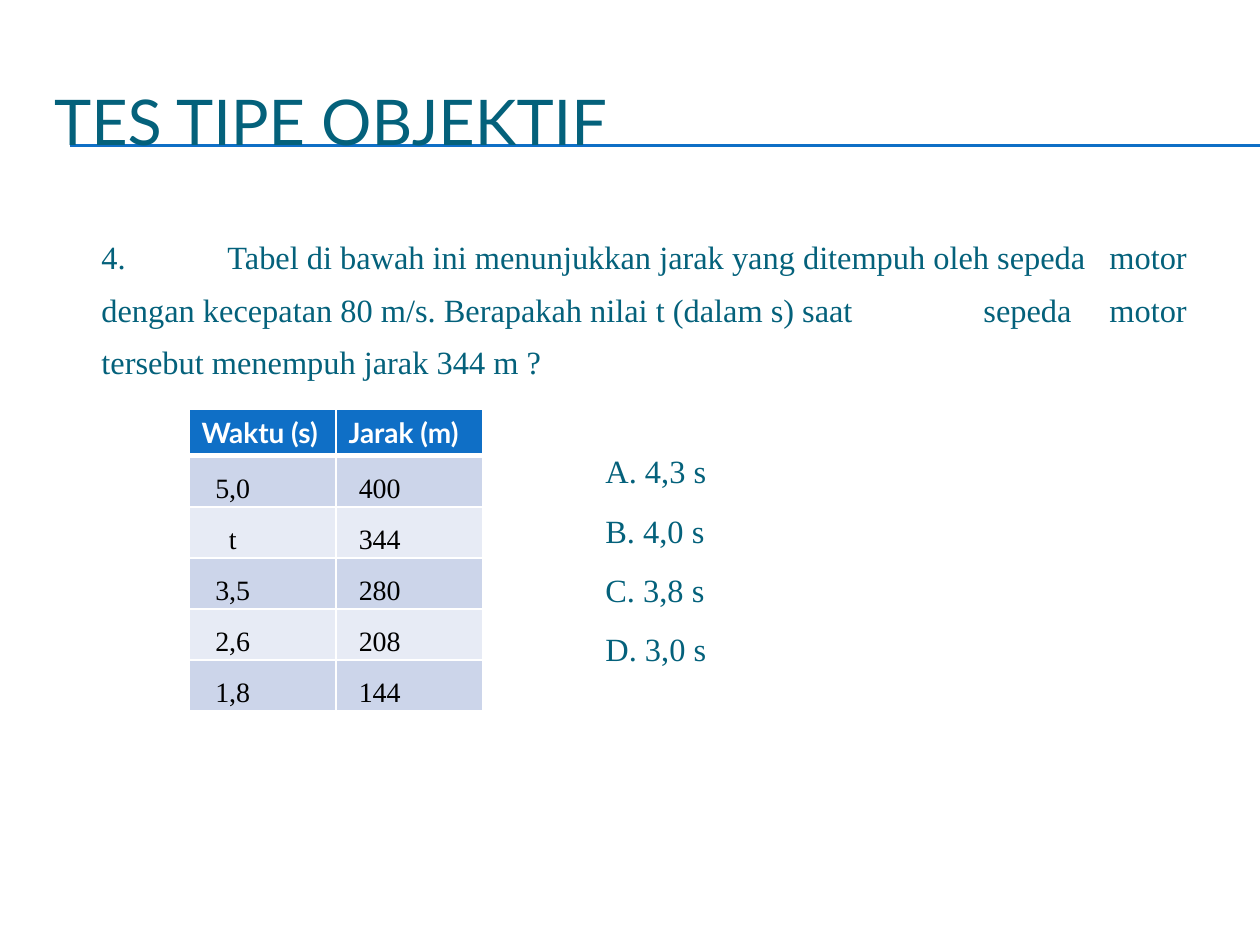
import pptx
import pptx.dml.color
import pptx.enum.shapes
import pptx.enum.text
import pptx.oxml.ns
import pptx.util
from lxml import etree

Pt = pptx.util.Pt
RGBColor = pptx.dml.color.RGBColor
Anchor = pptx.enum.text.MSO_ANCHOR
Align = pptx.enum.text.PP_ALIGN
qn = pptx.oxml.ns.qn

TEAL = RGBColor(0x04, 0x61, 0x7B)
BLUE = RGBColor(0x0F, 0x6F, 0xC6)
WHITE = RGBColor(0xFF, 0xFF, 0xFF)
BLACK = RGBColor(0x00, 0x00, 0x00)
BANDS = (RGBColor(0xCC, 0xD5, 0xEA), RGBColor(0xE7, 0xEB, 0xF5))
SANS, SERIF = "Lato", "Times New Roman"

QUESTION = ("4.\tTabel di bawah ini menunjukkan jarak yang ditempuh oleh sepeda \tmotor "
            "dengan kecepatan 80 m/s. Berapakah nilai t (dalam s) saat \tsepeda \tmotor "
            "tersebut menempuh jarak 344 m ?")
OPTIONS = ["A. 4,3 s", "B. 4,0 s", "C. 3,8 s", "D. 3,0 s"]
HEADERS = ["Waktu (s)", "Jarak (m)"]
READINGS = [("5,0", "400"), ("t", "344"), ("3,5", "280"), ("2,6", "208"), ("1,8", "144")]


def write_text(frame, lines, size=18.5, font=SERIF, color=TEAL, bold=False,
               align=Align.LEFT, line_spacing=1.0, space_after=0):
    """Fill a text frame with one paragraph for each line."""
    for index, line in enumerate(lines):
        paragraph = frame.paragraphs[0] if index == 0 else frame.add_paragraph()
        paragraph.alignment = align
        paragraph.line_spacing = line_spacing
        paragraph.space_after = Pt(space_after)
        run = paragraph.add_run()
        run.text = line
        run.font.size = Pt(size)
        run.font.name = font
        run.font.bold = bold
        run.font.color.rgb = color


def add_text_box(slide, left, top, width, height, lines, anchor=Anchor.TOP, **text_format):
    shape = slide.shapes.add_textbox(Pt(left), Pt(top), Pt(width), Pt(height))
    frame = shape.text_frame
    frame.word_wrap = True
    frame.vertical_anchor = anchor
    frame.margin_left = frame.margin_right = frame.margin_top = frame.margin_bottom = 0
    write_text(frame, lines, **text_format)
    return frame


def set_tab_stops(paragraph, positions):
    properties = paragraph._p.get_or_add_pPr()
    tab_list = etree.SubElement(properties, qn("a:tabLst"))
    for position in positions:
        etree.SubElement(tab_list, qn("a:tab"), pos=str(Pt(position)), algn="l")


def set_borders(cell, bottom_width):
    """Draw white borders; they must precede the fill in the cell properties."""
    properties = cell._tc.get_or_add_tcPr()
    widths = {"a:lnL": 1, "a:lnR": 1, "a:lnT": 1, "a:lnB": bottom_width}
    for index, (side, width) in enumerate(widths.items()):
        line = etree.Element(qn(side), w=str(Pt(width)))
        fill = etree.SubElement(line, qn("a:solidFill"))
        etree.SubElement(fill, qn("a:srgbClr"), val=str(WHITE))
        properties.insert(index, line)


def add_title(slide, left, top, width, height):
    # Double rule running to the right edge of the slide
    for rule_top in (top + 46.8, top + 47.5):
        rule = slide.shapes.add_connector(
            pptx.enum.shapes.MSO_CONNECTOR.STRAIGHT,
            Pt(left + 9), Pt(rule_top), Pt(720), Pt(rule_top))
        rule.line.color.rgb = BLUE
        rule.line.width = Pt(0.75)
        etree.SubElement(rule._element.spPr, qn("a:effectLst"))
    add_text_box(slide, left, top, width, height, ["TES TIPE OBJEKTIF"],
                 anchor=Anchor.MIDDLE, size=36, font=SANS)


def add_question(slide, left, top, width, height):
    frame = add_text_box(slide, left, top, width, height, [QUESTION], line_spacing=1.36)
    set_tab_stops(frame.paragraphs[0], (72, 504, 576))


def add_options(slide, left, top, width, height):
    add_text_box(slide, left, top, width, height, OPTIONS,
                 line_spacing=1.36, space_after=3.7)


def add_readings_table(slide, left, top, width, height, header_height=26):
    row_count = len(READINGS) + 1
    table = slide.shapes.add_table(row_count, len(HEADERS), Pt(left), Pt(top),
                                   Pt(width), Pt(height)).table
    for column in table.columns:
        column.width = Pt(width / len(HEADERS))
    for row_index, values in enumerate([HEADERS, *READINGS]):
        is_header = row_index == 0
        table.rows[row_index].height = Pt(
            header_height if is_header else (height - header_height) / len(READINGS))
        for column_index, value in enumerate(values):
            cell = table.cell(row_index, column_index)
            cell.fill.solid()
            cell.fill.fore_color.rgb = BLUE if is_header else BANDS[(row_index - 1) % 2]
            set_borders(cell, bottom_width=3 if is_header else 1)
            if is_header:
                write_text(cell.text_frame, [value], size=16, font=SANS,
                           color=WHITE, bold=True)
                continue
            # The wide right margin moves the centred values to the left
            cell.margin_left, cell.margin_right = Pt(5), Pt(39)
            cell.margin_top = cell.margin_bottom = 0
            cell.vertical_anchor = Anchor.MIDDLE
            write_text(cell.text_frame, [value], size=16, color=BLACK,
                       align=Align.CENTER, line_spacing=1.5)


def main():
    presentation = pptx.Presentation()
    presentation.slide_width, presentation.slide_height = Pt(720), Pt(540)
    slide = presentation.slides.add_slide(presentation.slide_layouts[6])
    add_title(slide, 31, 36, 670, 66)
    add_question(slide, 58, 127.3, 642, 87)
    add_options(slide, 346, 250, 200, 131)
    add_readings_table(slide, 108, 234, 168, 172)
    presentation.save("out.pptx")


if __name__ == "__main__":
    main()
